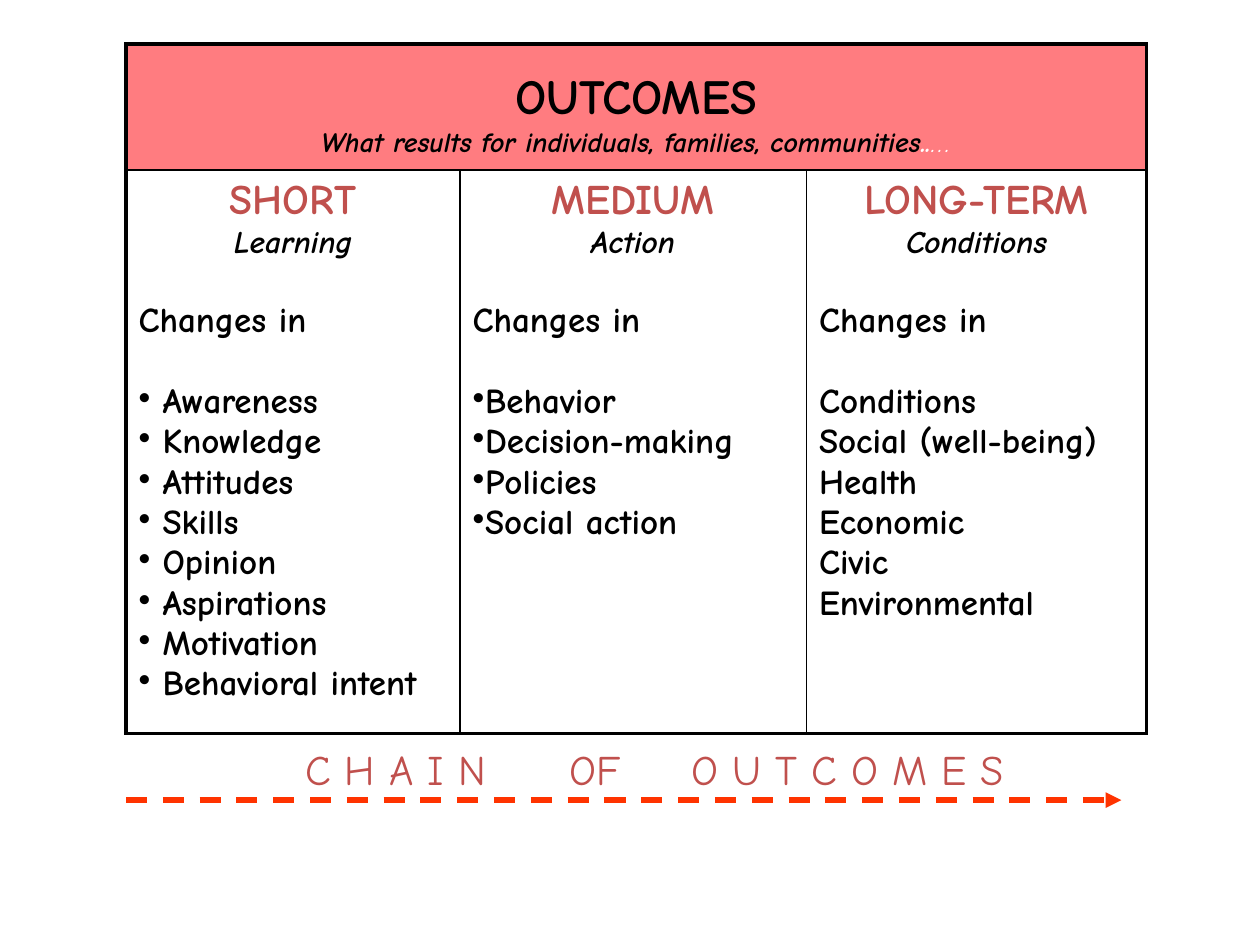
from dataclasses import dataclass

from lxml.etree import SubElement
from pptx import Presentation
from pptx.dml.color import RGBColor
from pptx.enum.dml import MSO_LINE_DASH_STYLE as Dash
from pptx.enum.shapes import MSO_CONNECTOR as Connector
from pptx.enum.text import MSO_AUTO_SIZE as AutoSize, PP_ALIGN as Align
from pptx.oxml.ns import qn
from pptx.util import Inches, Pt

FONT = "Comic Neue"
BLACK, WHITE, RED = "000000", "FFFFFF", "C0504D"
PINK, ORANGE = "FF7C80", "FF3300"
BLANK_LINE = 23
THICK, THIN = 2.25, 1


@dataclass
class Style:
    size: float
    color: str = BLACK
    bold: bool = True
    italic: bool = False


@dataclass
class Outcome:
    term: str
    focus: str
    items: list[str]
    width: float
    hanging: float = 0


OUTCOMES = [
    Outcome("SHORT", "Learning",
            ["Awareness", "Knowledge", "Attitudes", "Skills", "Opinion",
             "Aspirations", "Motivation", "Behavioral intent"], 2.65, 0.19),
    Outcome("MEDIUM", "Action",
            ["Behavior", "Decision-making", "Policies", "Social action"], 2.75, 0.1),
    Outcome("LONG-TERM", "Conditions",
            ["Conditions", "Social (well-being)", "Health", "Economic", "Civic",
             "Environmental"], 2.7),
]
TERM = Style(24, RED)
FOCUS = Style(18, italic=True)
BODY = Style(20)


def rgb(color: str) -> RGBColor:
    return RGBColor.from_string(color)


def add_span(para, text: str, style: Style):
    span = para.add_run()
    span.text = text
    span.font.name = FONT
    span.font.size = Pt(style.size)
    span.font.bold = style.bold
    span.font.italic = style.italic
    span.font.color.rgb = rgb(style.color)
    return span


def add_line(frame, text: str, style: Style, align=Align.LEFT, before: float = 0):
    para = frame.paragraphs[0]
    if para.runs:
        para = frame.add_paragraph()
    para.alignment = align
    para.space_before = Pt(before)
    add_span(para, text, style)
    return para


def add_bullet(para, hanging: float) -> None:
    properties = para._p.get_or_add_pPr()
    properties.set("marL", str(Inches(hanging)))
    properties.set("indent", str(-Inches(hanging)))
    SubElement(properties, qn("a:buChar"), char="•")


def set_borders(cell, left: float, right: float, top: float, bottom: float) -> None:
    properties = cell._tc.get_or_add_tcPr()
    for side, width in zip("LRTB", (left, right, top, bottom)):
        border = SubElement(properties, qn(f"a:ln{side}"), w=str(Pt(width)))
        fill = SubElement(border, qn("a:solidFill"))
        SubElement(fill, qn("a:srgbClr"), val=BLACK)


def fill_header(cell) -> None:
    cell.margin_top = Inches(0.21)
    cell.fill.solid()
    cell.fill.fore_color.rgb = rgb(PINK)
    frame = cell.text_frame
    add_line(frame, "OUTCOMES", Style(28), Align.CENTER)
    tagline = add_line(frame, "What results for individuals, families, communities",
                       Style(16, italic=True), Align.CENTER)
    add_span(tagline, "..", Style(16, WHITE, italic=True))
    add_span(tagline, "…", Style(16, WHITE, bold=False, italic=True))


def fill_outcome(cell, outcome: Outcome) -> None:
    cell.fill.background()
    frame = cell.text_frame
    add_line(frame, outcome.term, TERM, Align.CENTER)
    add_line(frame, outcome.focus, FOCUS, Align.CENTER)
    add_line(frame, "Changes in", BODY, before=BLANK_LINE)
    for index, item in enumerate(outcome.items):
        para = add_line(frame, item, BODY, before=0 if index else BLANK_LINE)
        if outcome.hanging:
            add_bullet(para, outcome.hanging)


def add_outcome_table(page) -> None:
    last = len(OUTCOMES) - 1
    table = page.shapes.add_table(2, len(OUTCOMES), Inches(1), Inches(0.35),
                                  Inches(8.1), Inches(5.47)).table
    table.first_row = table.horz_banding = False
    for row, height in zip(table.rows, (1, 4.47)):
        row.height = Inches(height)
    for index, outcome in enumerate(OUTCOMES):
        table.columns[index].width = Inches(outcome.width)
        set_borders(table.cell(0, index), THICK, THICK, THICK, THIN)
        cell = table.cell(1, index)
        set_borders(cell, THIN if index else THICK,
                    THIN if index < last else THICK, THIN, THICK)
        fill_outcome(cell, outcome)
    header = table.cell(0, 0)
    header.merge(table.cell(0, last))
    fill_header(header)


def add_chain_caption(page) -> None:
    box = page.shapes.add_textbox(Inches(1.4), Inches(5.85), Inches(7.7), Inches(0.5))
    frame = box.text_frame
    frame.word_wrap = True
    frame.auto_size = AutoSize.SHAPE_TO_FIT_TEXT
    style = Style(24, RED, bold=False)
    para = add_line(frame, "C H A I N", style, Align.CENTER)
    for gap, word in ((40, "OF"), (32, "O U T C O M E S ")):
        space = add_span(para, " ", style)
        space.font._element.set("spc", str(gap * 100))
        add_span(para, word, style)


def add_chain_arrow(page) -> None:
    arrow = page.shapes.add_connector(Connector.STRAIGHT, Inches(1), Inches(6.35),
                                      Inches(8.9), Inches(6.35))
    arrow.line.color.rgb = rgb(ORANGE)
    arrow.line.width = Pt(3)
    arrow.line.dash_style = Dash.DASH
    SubElement(arrow.line._get_or_add_ln(), qn("a:tailEnd"), type="triangle")
    SubElement(arrow._element.spPr, qn("a:effectLst"))


def main() -> None:
    deck = Presentation()
    deck.slide_width, deck.slide_height = Inches(10), Inches(7.5)
    page = deck.slides.add_slide(deck.slide_layouts[6])
    add_outcome_table(page)
    add_chain_caption(page)
    add_chain_arrow(page)
    deck.save("out.pptx")


if __name__ == "__main__":
    main()
